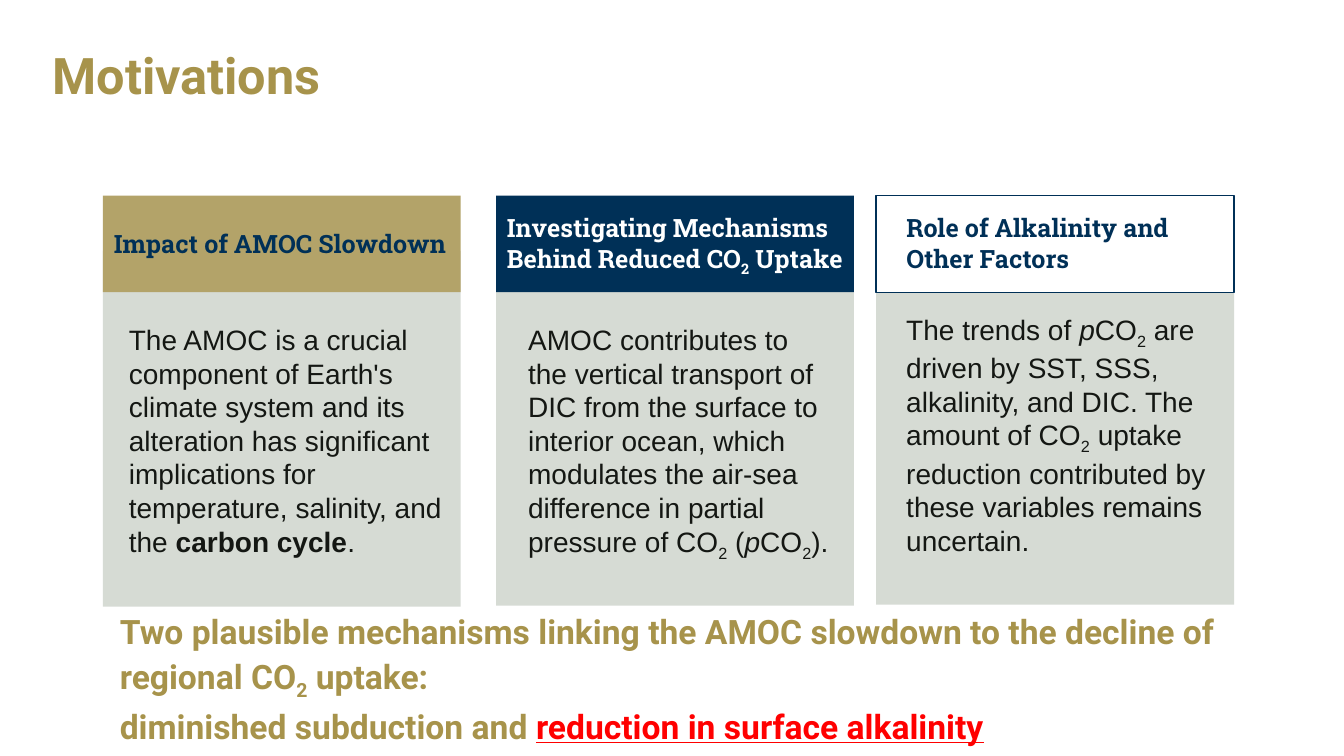
from pptx import Presentation
from pptx.dml.color import RGBColor
from pptx.enum import shapes, text
from pptx.util import Inches, Pt

COLORS = {"gold": "A7934B", "tan": "B3A369", "navy": "003057", "white": "FFFFFF",
          "panel": "D6DBD4", "ink": "141713", "red": "FF0000"}
CARD_WIDTH, HEADER_HEIGHT, PANEL_HEIGHT = 3.55, 0.96, 3.53
CARD_TOP = 1.94

# A text is a list of (words, style) runs; styles are "", "bold", "italic", "sub" and "alert".
CO2 = [("CO", ""), ("2", "sub")]
PCO2 = [("p", "italic"), *CO2]

# Text boxes are (left, top, width, height), measured from the card's top left corner.
CARDS = [
    {"left": 1.02, "panel_top": 0.55, "fill": "tan", "line": None, "color": "navy",
     "heading": [("Impact of AMOC Slowdown", "")], "heading_box": (0.01, 0.28, 3.55, 0.4),
     "body": [("The AMOC is a crucial component of Earth's climate system and its alteration "
               "has significant implications for temperature, salinity, and the ", ""),
              ("carbon cycle", "bold"), (".", "")],
     "body_box": (0.16, 1.21, 3.45, 2.46)},
    {"left": 4.92, "panel_top": 0.54, "fill": "navy", "line": None, "color": "white",
     "heading": [("Investigating Mechanisms Behind Reduced ", ""), *CO2, (" Uptake", "")],
     "heading_box": (0.01, 0.12, 3.67, 0.71),
     "body": [("AMOC contributes to the vertical transport of DIC from the surface to interior "
               "ocean, which modulates the air-sea difference in partial pressure of ", ""),
              *CO2, (" (", ""), *PCO2, (").", "")],
     "body_box": (0.22, 1.21, 3.24, 2.46)},
    {"left": 8.69, "panel_top": 0.53, "fill": "white", "line": "navy", "color": "navy",
     "heading": [("Role of Alkalinity and Other Factors", "")],
     "heading_box": (0.2, 0.12, 3.18, 0.71),
     "body": [("The trends of ", ""), *PCO2,
              (" are driven by SST, SSS, alkalinity, and DIC. The amount of ", ""), *CO2,
              (" uptake reduction contributed by these variables remains uncertain.", "")],
     "body_box": (0.2, 1.11, 3.26, 2.46)},
]
CONCLUSION = [
    [("Two plausible mechanisms linking the AMOC slowdown to the decline of regional ", ""),
     *CO2, (" uptake:", "")],
    [("diminished subduction and ", ""), ("reduction in surface alkalinity", "alert")],
]


def rgb(name):
    return RGBColor.from_string(COLORS[name])


def format_font(font, name, size, color, bold):
    font.name, font.size, font.bold = name, Pt(size), bold
    font.color.rgb = rgb(color)


def add_runs(paragraph, runs, name, size, color, bold=False):
    for words, style in runs:
        run = paragraph.add_run()
        run.text = words
        format_font(run.font, name, size, color, bold or style == "bold")
        if style == "italic":
            run.font.italic = True
        elif style == "sub":
            run._r.get_or_add_rPr().set("baseline", "-25000")
        elif style == "alert":
            run.font.underline = True
            run.font.color.rgb = rgb("red")


def add_text_box(slide, left, top, width, height):
    box = slide.shapes.add_textbox(Inches(left), Inches(top), Inches(width), Inches(height))
    box.text_frame.word_wrap = True
    return box.text_frame


def add_rectangle(slide, left, top, height, fill, line=None):
    rectangle = slide.shapes.add_shape(shapes.MSO_SHAPE.RECTANGLE, Inches(left), Inches(top),
                                       Inches(CARD_WIDTH), Inches(height))
    rectangle.shadow.inherit = False
    rectangle.fill.solid()
    rectangle.fill.fore_color.rgb = rgb(fill)
    if line:
        rectangle.line.color.rgb = rgb(line)
        rectangle.line.width = Pt(1)
    else:
        rectangle.line.fill.background()


def add_title(slide, left, top, width, height):
    title = slide.shapes.title
    title.left, title.top = Inches(left), Inches(top)
    title.width, title.height = Inches(width), Inches(height)
    frame = title.text_frame
    frame.text = "Motivations"
    frame.auto_size = text.MSO_AUTO_SIZE.NONE
    frame.vertical_anchor = text.MSO_ANCHOR.MIDDLE
    paragraph = frame.paragraphs[0]
    paragraph.alignment = text.PP_ALIGN.LEFT
    paragraph.line_spacing = 0.9
    format_font(paragraph.runs[0].font, "Roboto", 36, "gold", True)


def add_card(slide, card, left, top):
    """Draw a grey panel under a coloured header, each with its text."""
    add_rectangle(slide, left, top + card["panel_top"], PANEL_HEIGHT, "panel")
    add_rectangle(slide, left, top, HEADER_HEIGHT, card["fill"], card["line"])
    for part, font in (("heading", ("Roboto Slab", 18, card["color"], True)),
                       ("body", ("Arial", 20, "ink"))):
        dx, dy, width, height = card[part + "_box"]
        frame = add_text_box(slide, left + dx, top + dy, width, height)
        add_runs(frame.paragraphs[0], card[part], *font)


def add_conclusion(slide, left, top, width, height):
    frame = add_text_box(slide, left, top, width, height)
    for index, runs in enumerate(CONCLUSION):
        paragraph = frame.add_paragraph() if index else frame.paragraphs[0]
        paragraph.line_spacing = 1.1
        add_runs(paragraph, runs, "Roboto", 24, "gold", True)


def main():
    presentation = Presentation()
    presentation.slide_width, presentation.slide_height = Inches(13.33), Inches(7.5)
    slide = presentation.slides.add_slide(presentation.slide_layouts[5])
    add_title(slide, 0.42, 0.22, 12.5, 1.11)
    for card in CARDS:
        add_card(slide, card, card["left"], CARD_TOP)
    add_conclusion(slide, 1.09, 5.97, 11.93, 1.48)
    presentation.save("out.pptx")


if __name__ == "__main__":
    main()
